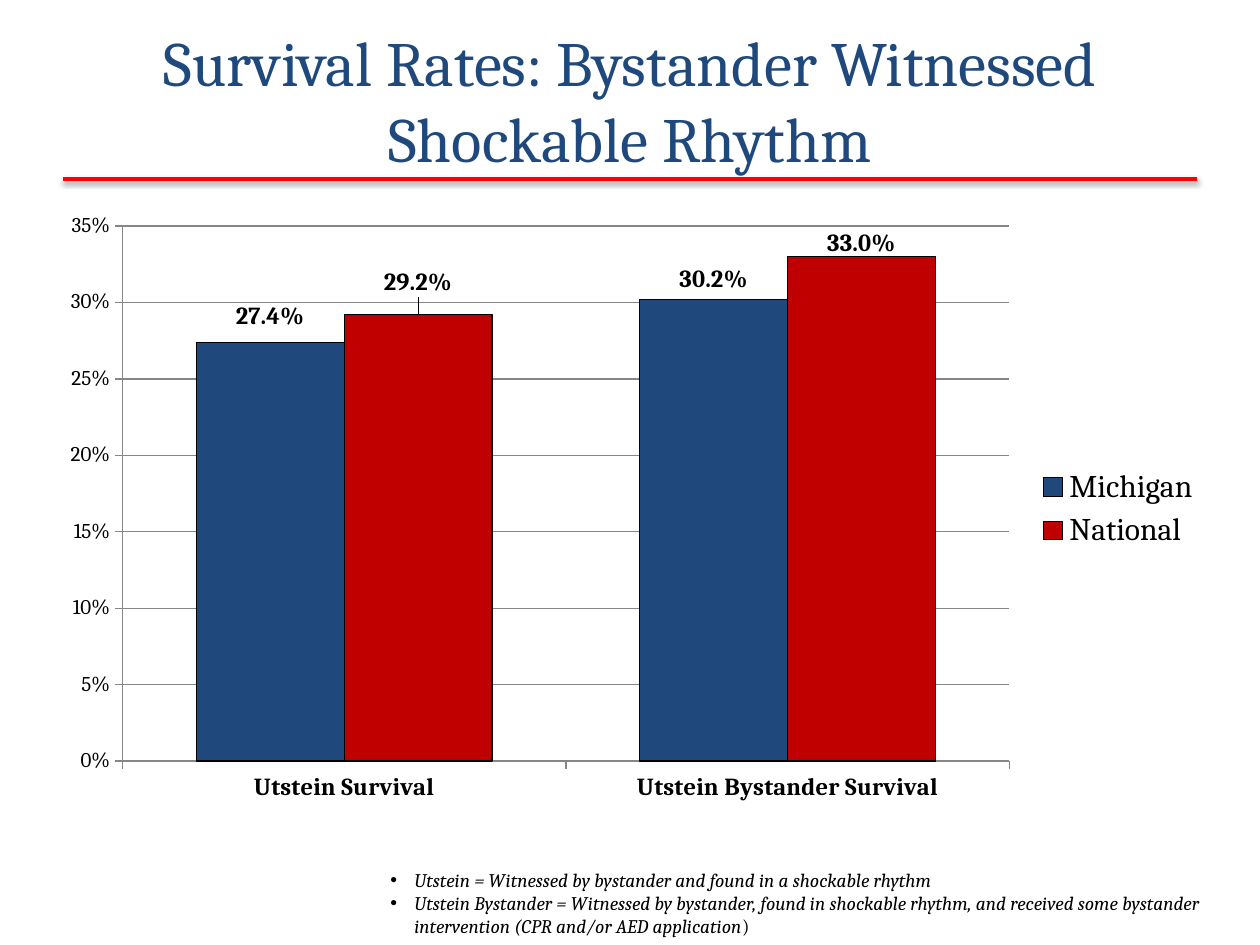
import pptx
import pptx.chart.data
import pptx.dml.color
import pptx.enum.chart
import pptx.enum.shapes
import pptx.enum.text
import pptx.oxml
import pptx.oxml.ns
import pptx.util

WIDTH, HEIGHT = 10, 7.5
FONT = "Cambria"
NAVY, RED, CRIMSON, GREY, BLACK = "1F497D", "FF0000", "C00000", "868686", "000000"
CATEGORIES = ["Utstein Survival", "Utstein Bystander Survival"]
SERIES = [
    ("Michigan", [0.274, 0.302], NAVY, {0: -0.01}),
    ("National", [0.292, 0.33], CRIMSON, {0: -0.02, 1: 0.01}),
]
NOTES = [
    ["Utstein = Witnessed by bystander and found in a shockable rhythm"],
    ["Utstein Bystander = Witnessed by bystander, found in shockable rhythm, "
     "and received some bystander intervention (CPR and/or AED application", ")"],
]


def color(hex_string):
    """Turn a hex string into a colour."""
    return pptx.dml.color.RGBColor.from_string(hex_string)


def inches(*lengths):
    """Turn numbers into lengths in inches."""
    return [pptx.util.Inches(length) for length in lengths]


def style(font, size, hex_string=BLACK, bold=False, italic=False):
    """Format a font."""
    font.name, font.size = FONT, pptx.util.Pt(size)
    font.bold, font.italic = bold, italic
    font.color.rgb = color(hex_string)


def outline(line, hex_string, width):
    """Format a line."""
    line.color.rgb = color(hex_string)
    line.width = pptx.util.Pt(width)


def set_title(slide, text):
    """Place and fill the title."""
    title = slide.shapes.title
    title.left, title.top, title.width, title.height = inches(0.5, 0.25, WIDTH - 1, 1.08)
    frame = title.text_frame
    frame.text = text
    frame.vertical_anchor = pptx.enum.text.MSO_ANCHOR.MIDDLE
    frame.paragraphs[0].alignment = pptx.enum.text.PP_ALIGN.CENTER
    style(frame.paragraphs[0].runs[0].font, 36, NAVY)


def add_rule(slide, top):
    """Draw the shadowed rule under the title."""
    rule = slide.shapes.add_connector(
        pptx.enum.shapes.MSO_CONNECTOR.STRAIGHT, *inches(0.5, top, WIDTH - 0.5, top))
    outline(rule.line, RED, 2)
    rule._element.spPr.append(pptx.oxml.parse_xml(
        f'<a:effectLst {pptx.oxml.ns.nsdecls("a")}>'
        '<a:outerShdw blurRad="40000" dist="20000" dir="5400000" rotWithShape="0">'
        '<a:srgbClr val="000000"><a:alpha val="38000"/></a:srgbClr>'
        '</a:outerShdw></a:effectLst>'))


def layout(target="", **shares):
    """Build a manual chart layout from shares of the chart's size."""
    inner = '<c:layoutTarget val="inner"/><c:xMode val="edge"/><c:yMode val="edge"/>'
    values = "".join(f'<c:{key} val="{share}"/>' for key, share in shares.items())
    return pptx.oxml.parse_xml(
        f'<c:layout {pptx.oxml.ns.nsdecls("c")}><c:manualLayout>'
        f'{inner if target == "inner" else ""}{values}</c:manualLayout></c:layout>')


def format_series(series, hex_string, shifts):
    """Format the bars of a series and shift its labels vertically."""
    series.format.fill.solid()
    series.format.fill.fore_color.rgb = color(hex_string)
    outline(series.format.line, BLACK, 0.75)
    series.invert_if_negative = False
    labels = series.data_labels
    labels.show_value = True
    labels.number_format, labels.number_format_is_linked = "0.0%", False
    labels.position = pptx.enum.chart.XL_LABEL_POSITION.OUTSIDE_END
    style(labels.font, 14, bold=True)
    for index in shifts:
        label = series.points[index].data_label
        style(label.font, 14, bold=True)
        label.position = pptx.enum.chart.XL_LABEL_POSITION.OUTSIDE_END
    for label, shift in zip(series._element.xpath("c:dLbls/c:dLbl"), shifts.values()):
        label.insert(1, layout(x=0, y=shift))


def format_axis(axis, size, bold=False):
    """Format an axis and its labels."""
    axis.major_tick_mark = pptx.enum.chart.XL_TICK_MARK.OUTSIDE
    axis.minor_tick_mark = pptx.enum.chart.XL_TICK_MARK.NONE
    outline(axis.format.line, GREY, 0.75)
    style(axis.tick_labels.font, size, bold=bold)


def add_survival_chart(slide):
    """Add the clustered column chart of survival rates."""
    data = pptx.chart.data.CategoryChartData(number_format="0.0%")
    data.categories = CATEGORIES
    for name, values, _, _ in SERIES:
        data.add_series(name, values)
    chart = slide.shapes.add_chart(
        pptx.enum.chart.XL_CHART_TYPE.COLUMN_CLUSTERED,
        *inches(0.38, 1.61, 9.25, 4.86), data).chart
    style(chart.font, 18)
    chart.has_title = False
    chart.has_legend = True
    chart.legend.position = pptx.enum.chart.XL_LEGEND_POSITION.RIGHT
    chart.legend.include_in_layout = False
    style(chart.legend.font, 18)
    plot = chart.plots[0]
    plot.gap_width, plot.overlap, plot.vary_by_categories = 100, 0, False
    for series, (_, _, hex_string, shifts) in zip(plot.series, SERIES):
        format_series(series, hex_string, shifts)
    format_axis(chart.category_axis, 14, bold=True)
    rates = chart.value_axis
    format_axis(rates, 12)
    rates.minimum_scale, rates.maximum_scale, rates.major_unit = 0, 0.35, 0.05
    rates.tick_labels.number_format = "0%"
    rates.tick_labels.number_format_is_linked = False
    outline(rates.major_gridlines.format.line, GREY, 0.75)
    area = chart._chartSpace.chart.plotArea
    for old in area.xpath("c:layout"):
        area.remove(old)
    area.insert(0, layout("inner", x=0.064, y=0.038, w=0.761, h=0.874))


def add_notes_box(slide):
    """Add the bulleted definitions at the foot."""
    box = slide.shapes.add_textbox(*inches(0.3 * WIDTH, 6.84, 0.7 * WIDTH, HEIGHT - 6.84))
    frame = box.text_frame
    frame.word_wrap = True
    for index, spans in enumerate(NOTES):
        para = frame.add_paragraph() if index else frame.paragraphs[0]
        properties = para._p.get_or_add_pPr()
        indent = pptx.util.Inches(0.19)
        properties.set("marL", str(indent))
        properties.set("indent", str(-indent))
        for bullet in ('buFont {} typeface="Arial"', 'buChar {} char="•"'):
            properties.append(pptx.oxml.parse_xml(
                f'<a:{bullet.format(pptx.oxml.ns.nsdecls("a"))}/>'))
        for position, text in enumerate(spans):
            span = para.add_run()
            span.text = text
            style(span.font, 11, italic=position == 0)


def main():
    """Build and save the slide."""
    deck = pptx.Presentation()
    deck.slide_width, deck.slide_height = inches(WIDTH, HEIGHT)
    slide = deck.slides.add_slide(deck.slide_layouts[5])
    set_title(slide, "Survival Rates: Bystander Witnessed Shockable Rhythm")
    add_rule(slide, 1.42)
    add_survival_chart(slide)
    add_notes_box(slide)
    deck.save("out.pptx")


if __name__ == "__main__":
    main()
